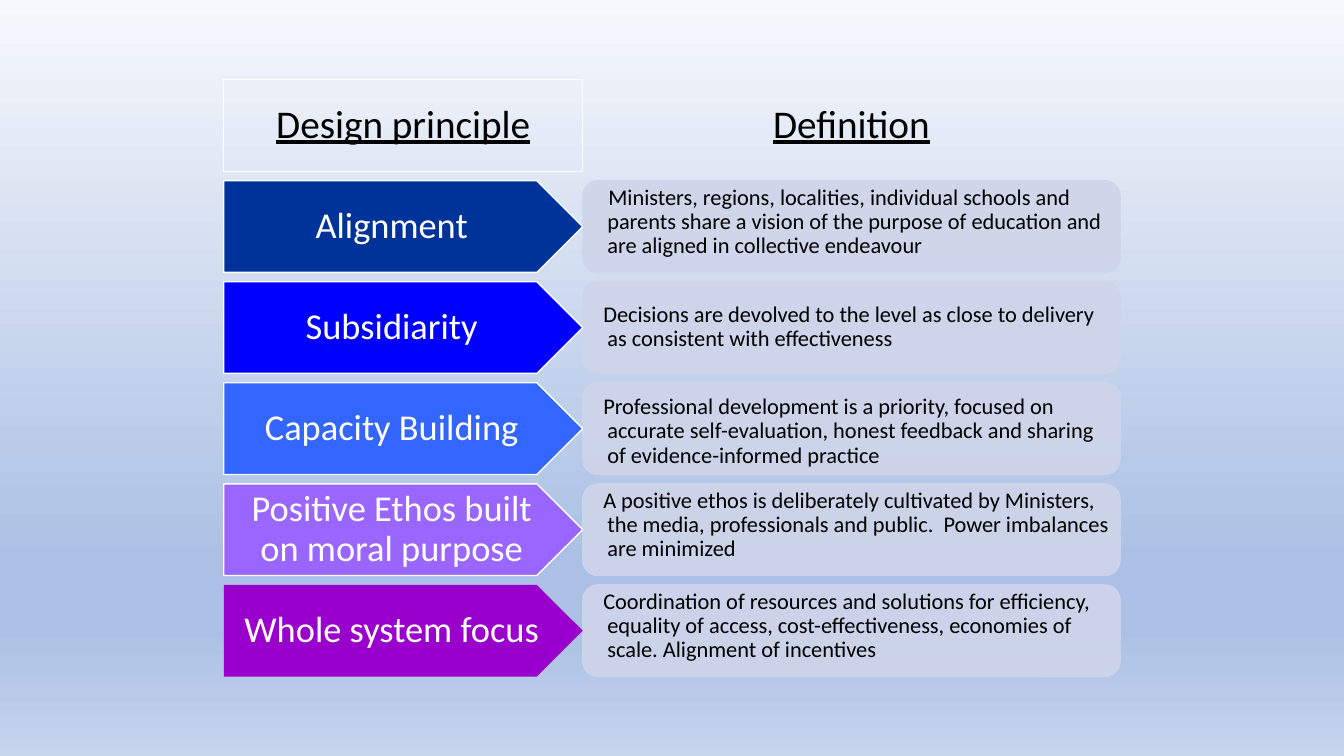
from copy import deepcopy

from lxml.etree import SubElement
from pptx import Presentation
from pptx.dml.color import RGBColor
from pptx.enum.shapes import MSO_SHAPE as SHAPE
from pptx.enum.text import MSO_ANCHOR as ANCHOR, PP_ALIGN as ALIGN
from pptx.oxml.ns import qn
from pptx.util import Inches, Pt

COLORS = {
    "white": "FFFFFF", "black": "000000", "panel": "CFD5EA",
    "navy": "003399", "blue": "0000FF", "sky": "3366FF",
    "violet": "9966FF", "purple": "9900CC",
    "pale": "F6F8FC", "mid": "ABC0E4", "base": "C7D5ED",
}
STOPS = [(0, "pale"), (0.74, "mid"), (0.83, "mid"), (1, "base")]
FONT = "Calibri"
LEFT, SPLIT, TOP = 2.22, 5.78, 0.79
NAME_W, DEF_W, ROW_H, STEP = 3.56, 5.33, 0.91, 1.0025

# Name, colour, edge, definition, anchor, top inset, first-line indent
ROWS = [
    ("Alignment", "navy", "white",
     "Ministers, regions, localities, individual schools and parents share "
     "a vision of the purpose of education and are aligned in collective "
     "endeavour", ANCHOR.TOP, 0.01, 0.01),
    ("Subsidiarity", "blue", "white",
     "Decisions are devolved to the level as close to delivery as "
     "consistent with effectiveness", ANCHOR.MIDDLE, 0.01, -0.04),
    ("Capacity Building", "sky", "white",
     "Professional development is a priority, focused on accurate "
     "self-evaluation, honest feedback and sharing of evidence-informed "
     "practice", ANCHOR.MIDDLE, 0.07, -0.04),
    ("Positive Ethos built on moral purpose", "violet", "white",
     "A positive ethos is deliberately cultivated by Ministers, the media, "
     "professionals and public.  Power imbalances are minimized",
     ANCHOR.TOP, 0.01, -0.04),
    ("Whole system focus", "purple", None,
     "Coordination of resources and solutions for efficiency, equality of "
     "access, cost-effectiveness, economies of scale. Alignment of "
     "incentives", ANCHOR.TOP, 0.01, -0.04),
]


def rgb(name):
    return RGBColor.from_string(COLORS[name])


def paint_back(slide):
    fill = slide.background.fill
    fill.gradient()
    fill.gradient_angle = 270
    stops = slide.element.xpath(".//a:gsLst")[0]
    for _ in range(len(STOPS) - len(stops)):
        stops.append(deepcopy(stops[0]))
    for stop, (place, color) in zip(fill.gradient_stops, STOPS):
        stop.position = place
        stop.color.rgb = rgb(color)


def add_box(slide, kind, left, top, width, fill=None, line=None):
    box = slide.shapes.add_shape(
        kind, Inches(left), Inches(top), Inches(width), Inches(ROW_H))
    box.shadow.inherit = False
    if fill:
        box.fill.solid()
        box.fill.fore_color.rgb = rgb(fill)
    else:
        box.fill.background()
    if line:
        box.line.color.rgb = rgb(line)
        box.line.width = Pt(1)
    else:
        box.line.fill.background()
    return box


def fade(box, percent):
    """Set the opacity of the fill and line."""
    for color in box.element.xpath("./p:spPr//a:srgbClr"):
        SubElement(color, qn("a:alpha")).set("val", str(percent * 1000))


def write(box, text, size, color, pads, align=ALIGN.CENTER,
          anchor=ANCHOR.MIDDLE, under=None):
    """Fill a box with one paragraph; pads are left, top, right, bottom."""
    frame = box.text_frame
    frame.word_wrap = True
    frame.vertical_anchor = anchor
    (frame.margin_left, frame.margin_top,
     frame.margin_right, frame.margin_bottom) = map(Inches, pads)
    para = frame.paragraphs[0]
    para.alignment = align
    para.line_spacing = 0.9
    run = para.add_run()
    run.text = text
    font = run.font
    font.name, font.size, font.underline = FONT, Pt(size), under
    font.color.rgb = rgb(color)
    return para


def add_heads(slide):
    for text, left, width, line in (
            ("Design principle", LEFT, NAME_W, "white"),
            ("Definition", SPLIT, DEF_W, None)):
        box = add_box(slide, SHAPE.RECTANGLE, left, TOP, width, line=line)
        write(box, text, 28, "black", (0.12, 0.06, 0.12, 0.06), under=True)


def add_row(slide, top, name, color, edge, text, anchor, pad, indent):
    panel = add_box(slide, SHAPE.ROUNDED_RECTANGLE, SPLIT, top, DEF_W,
                    "panel", "panel")
    fade(panel, 90)
    para = write(panel, text, 16, "black", (0.01, pad, 0.01, 0.01),
                 ALIGN.LEFT, anchor)
    props = para._p.get_or_add_pPr()
    props.set("marL", str(Inches(0.19)))
    props.set("indent", str(Inches(indent)))

    arrow = add_box(slide, SHAPE.PENTAGON, LEFT, top, NAME_W, color, edge)
    write(arrow, name, 26, "white", (0.11, 0.05, 0.11, 0.05))


def main():
    deck = Presentation()
    deck.slide_width, deck.slide_height = Inches(13.33), Inches(7.5)
    slide = deck.slides.add_slide(deck.slide_layouts[6])
    paint_back(slide)
    add_heads(slide)
    for i, row in enumerate(ROWS, 1):
        add_row(slide, TOP + i * STEP, *row)
    deck.save("out.pptx")


if __name__ == "__main__":
    main()
